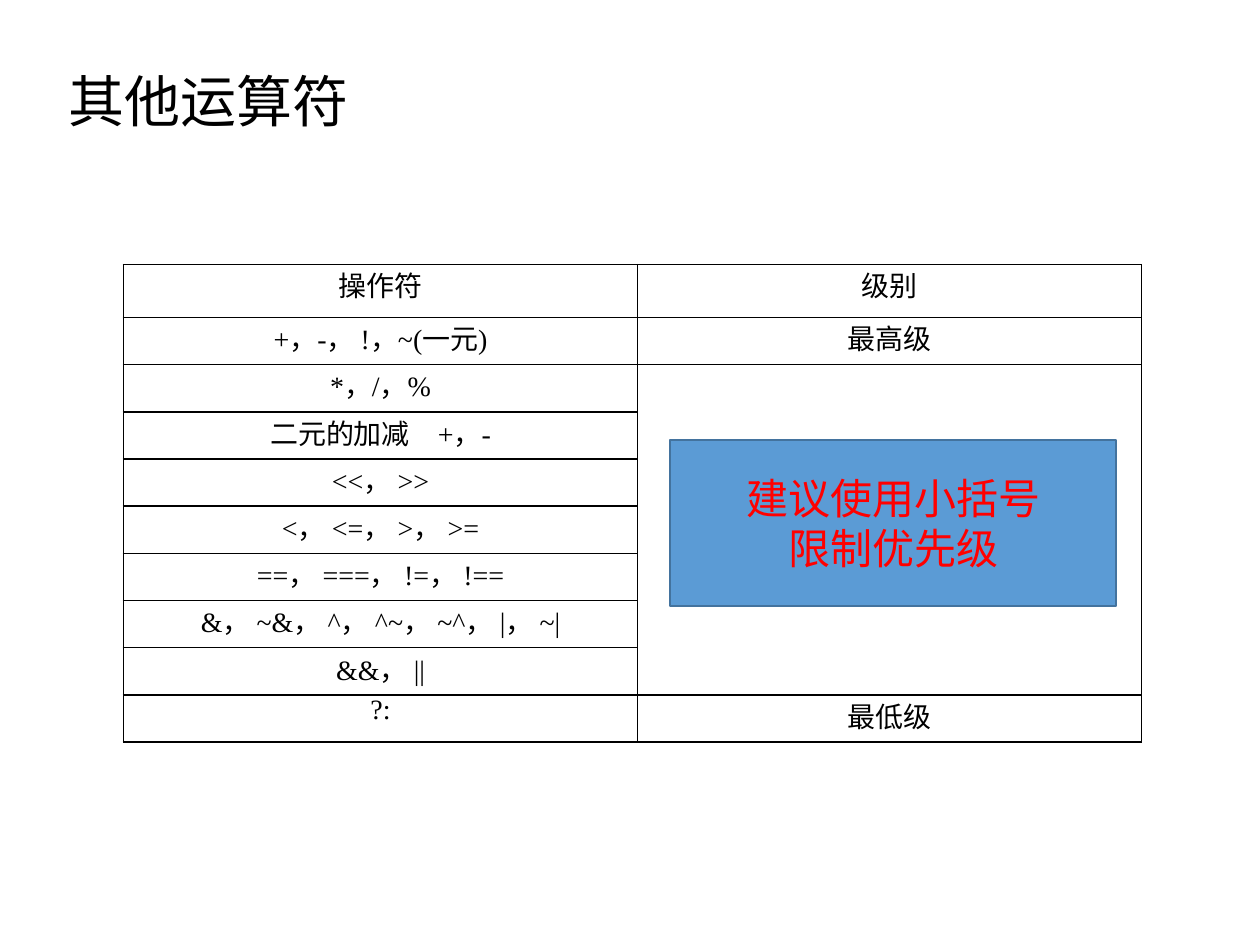
from lxml import etree
from pptx import Presentation
from pptx import util as u
from pptx.dml.color import RGBColor
from pptx.enum import shapes, text
from pptx.oxml import ns

BLACK = RGBColor(0x00, 0x00, 0x00)
RED = RGBColor(0xFF, 0x00, 0x00)
BLUE = RGBColor(0x5B, 0x9B, 0xD5)
DARK_BLUE = RGBColor(0x43, 0x73, 0x9E)

HEADER = ("操作符", "级别")
OPERATORS = [
    "+，-， !，~(一元)",
    "*，/，%",
    "二元的加减　+，-",
    "<<， >>",
    "<， <=， >， >=",
    "==， ===， !=， !==",
    "&， ~&， ^， ^~， ~^， |， ~|",
    "&&， ||",
    "?:",
]
HIGHEST, LOWEST = "最高级", "最低级"


class SlideBuilder:
    TITLE = {"name": "Calibri", "size": u.Pt(32), "bold": False}
    CELL = {"name": "Times New Roman", "size": u.Pt(16), "bold": False}
    CALLOUT = {"name": "Calibri", "size": u.Pt(24), "bold": False}
    CELL_MARGINS = {
        "margin_left": u.Inches(0.07),
        "margin_right": u.Inches(0.07),
        "margin_top": 0,
        "margin_bottom": 0,
    }

    def __init__(self, presentation):
        title_only = presentation.slide_layouts[5]
        self.slide = presentation.slides.add_slide(title_only)

    def apply(self, target, values):
        for name, value in values.items():
            setattr(target, name, value)

    def fill_text(self, frame, content, font, color, alignment):
        frame.text = content
        for paragraph in frame.paragraphs:
            paragraph.alignment = alignment
            self.apply(paragraph.font, font)
            paragraph.font.color.rgb = color

    def box(self, left, top, width, height):
        return [u.Inches(length) for length in (left, top, width, height)]

    def title(self, content, *place):
        shape = self.slide.shapes.title
        names = ("left", "top", "width", "height")
        self.apply(shape, dict(zip(names, self.box(*place))))
        frame = shape.text_frame
        self.fill_text(frame, content, self.TITLE, BLACK, text.PP_ALIGN.LEFT)
        frame.vertical_anchor = text.MSO_ANCHOR.MIDDLE
        frame.paragraphs[0].line_spacing = 0.9

    def border(self, cell):
        properties = cell._tc.get_or_add_tcPr()
        for position, side in enumerate(("lnL", "lnR", "lnT", "lnB")):
            line = etree.Element(ns.qn(f"a:{side}"), w=str(u.Pt(1)))
            fill = etree.SubElement(line, ns.qn("a:solidFill"))
            etree.SubElement(fill, ns.qn("a:srgbClr"), val=str(BLACK))
            properties.insert(position, line)

    def table(self, rows, left, top, column_widths, row_heights):
        place = self.box(left, top, sum(column_widths), sum(row_heights))
        frame = self.slide.shapes.add_table(
            len(rows), len(column_widths), *place)
        table = frame.table
        self.apply(table, {"first_row": False, "horz_banding": False})
        for column, width in zip(table.columns, column_widths):
            column.width = u.Inches(width)
        for row, height, contents in zip(table.rows, row_heights, rows):
            row.height = u.Inches(height)
            for cell, content in zip(row.cells, contents):
                self.apply(cell, self.CELL_MARGINS)
                cell.fill.background()
                self.border(cell)
                self.fill_text(cell.text_frame, content, self.CELL, BLACK,
                               text.PP_ALIGN.CENTER)
        return table

    def callout(self, content, *place):
        shape = self.slide.shapes.add_shape(
            shapes.MSO_SHAPE.RECTANGLE, *self.box(*place))
        shape.shadow.inherit = False
        shape.fill.solid()
        shape.fill.fore_color.rgb = BLUE
        shape.line.color.rgb = DARK_BLUE
        shape.line.width = u.Pt(1)
        frame = shape.text_frame
        frame.vertical_anchor = text.MSO_ANCHOR.MIDDLE
        self.fill_text(frame, content, self.CALLOUT, RED,
                       text.PP_ALIGN.CENTER)


def main():
    presentation = Presentation()
    presentation.slide_width = u.Inches(10)
    presentation.slide_height = u.Inches(7.5)

    builder = SlideBuilder(presentation)
    builder.title("其他运算符", 0.44, 0.4, 8.62, 0.85)

    between = [""] * (len(OPERATORS) - 2)
    rows = [HEADER, *zip(OPERATORS, [HIGHEST, *between, LOWEST])]
    header_height, table_height = 0.42, 3.79
    row_height = (table_height - header_height) / len(OPERATORS)
    heights = [header_height] + [row_height] * len(OPERATORS)
    table = builder.table(rows, 0.98, 2.1, (4.08, 4), heights)
    table.cell(2, 1).merge(table.cell(len(OPERATORS) - 1, 1))

    builder.callout("建议使用小括号\n限制优先级", 5.32, 3.49, 3.54, 1.32)
    presentation.save("out.pptx")


if __name__ == "__main__":
    main()
